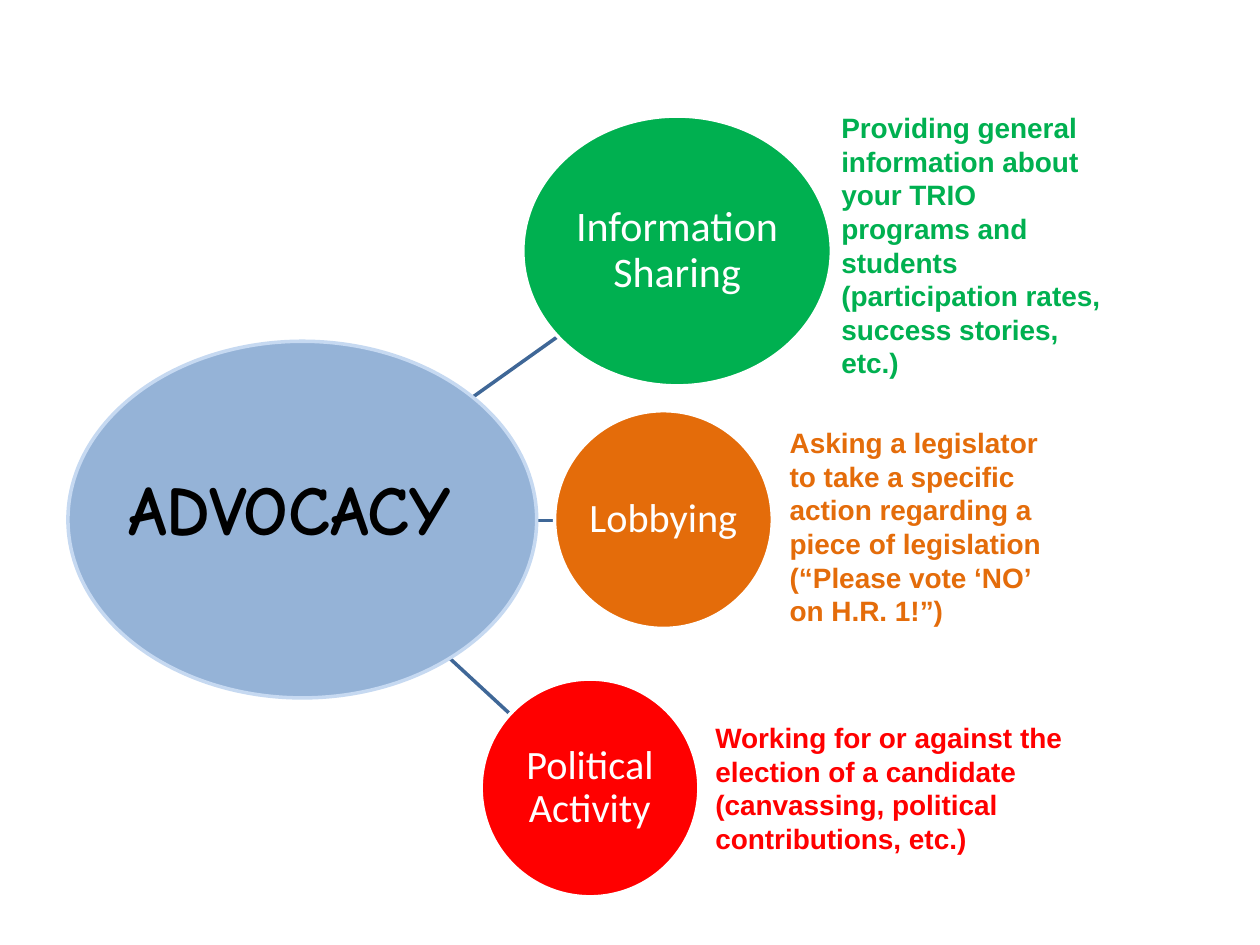
from dataclasses import dataclass

from lxml import etree
from pptx import Presentation
from pptx import util as u
from pptx.dml.color import RGBColor
from pptx.enum import shapes, text
from pptx.oxml import ns


@dataclass(frozen=True)
class Theme:
    # Colours
    hub: str = "95B3D7"
    rim: str = "C6D9F1"
    spoke: str = "3F6797"
    green: str = "00B050"
    orange: str = "E46C0A"
    red: str = "FF0000"
    white: str = "FFFFFF"
    black: str = "000000"
    # Type sizes and line width, in points
    title: int = 40
    large: int = 24
    label: int = 23
    note: int = 16
    line: int = 2


class Deck:
    def __init__(self, theme, slide):
        self.theme = theme
        self.slide = slide

    def words(self, frame, copy, size, font, color, bold=False):
        frame.word_wrap = True
        par = frame.paragraphs[0]
        run = par.add_run()
        run.text = copy
        style = {"size": u.Pt(size), "name": font, "bold": bold}
        for key, value in style.items():
            setattr(run.font, key, value)
        run.font.color.rgb = RGBColor.from_string(color)
        return par

    def spoke(self, start, end):
        ends = [u.Cm(n) for n in (*start, *end)]
        line = self.slide.shapes.add_connector(shapes.MSO_CONNECTOR.STRAIGHT, *ends)
        line.line.color.rgb = RGBColor.from_string(self.theme.spoke)
        line.line.width = u.Pt(self.theme.line)
        etree.SubElement(line._element.spPr, ns.qn("a:effectLst"))

    def oval(self, box, fill, rim, label="", size=0):
        oval = self.slide.shapes.add_shape(
            shapes.MSO_SHAPE.OVAL, *[u.Cm(n) for n in box])
        oval.shadow.inherit = False
        oval.fill.solid()
        oval.fill.fore_color.rgb = RGBColor.from_string(fill)
        oval.line.color.rgb = RGBColor.from_string(rim)
        oval.line.width = u.Pt(self.theme.line)
        if label:
            frame = oval.text_frame
            for side in ("left", "top", "right", "bottom"):
                setattr(frame, f"margin_{side}", u.Cm(0.05))
            frame.vertical_anchor = text.MSO_ANCHOR.MIDDLE
            par = self.words(frame, label, size, "Calibri", self.theme.white)
            par.alignment = text.PP_ALIGN.CENTER
            par.line_spacing = 0.9

    def note(self, box, label, size, font, color):
        frame = self.slide.shapes.add_textbox(*[u.Cm(n) for n in box]).text_frame
        frame.auto_size = text.MSO_AUTO_SIZE.SHAPE_TO_FIT_TEXT
        self.words(frame, label, size, font, color, bold=True)


def main():
    theme = Theme()
    show = Presentation()
    show.slide_width, show.slide_height = u.Cm(25.4), u.Cm(19.05)
    deck = Deck(theme, show.slides.add_slide(show.slide_layouts[6]))

    # Spokes, behind the ovals
    root = 8.61
    for y, end in ((12.85, (10.29, 14.4)), (10.49, (11.18, 10.49)),
                   (8.66, (11.25, 6.78))):
        deck.spoke((root, y), end)

    # Hub
    deck.oval((1.37, 6.88, 9.45, 7.19), theme.hub, theme.rim)
    deck.note((2.34, 9.25, 8.05, 1.96), "ADVOCACY",
              theme.title, "Comic Neue", theme.black)

    # Branches: each oval with the note in its colour
    side = 4.39
    parts = (
        ("Information Sharing", theme.large, theme.green,
         (10.54, 2.34, 6.22, 5.44), (16.71, 2.11, 5.92, 5.74),
         "Providing general information about your TRIO programs and students "
         "(participation rates, success stories, etc.)"),
        ("Lobbying", theme.label, theme.orange,
         (11.18, 8.28, side, side), (15.67, 8.46, 5.92, 4.37),
         "Asking a legislator to take a specific action regarding a piece of "
         "legislation (“Please vote ‘NO’ on H.R. 1!”)"),
        ("Political Activity", theme.label, theme.red,
         (9.7, 13.69, side, side), (14.17, 14.4, 7.62, 3),
         "Working for or against the election of a candidate "
         "(canvassing, political contributions, etc.)"),
    )
    for name, size, color, oval, box, detail in parts:
        deck.oval(oval, color, theme.white, name, size)
        deck.note(box, detail, theme.note, "Arial", color)

    show.save("out.pptx")


if __name__ == "__main__":
    main()
